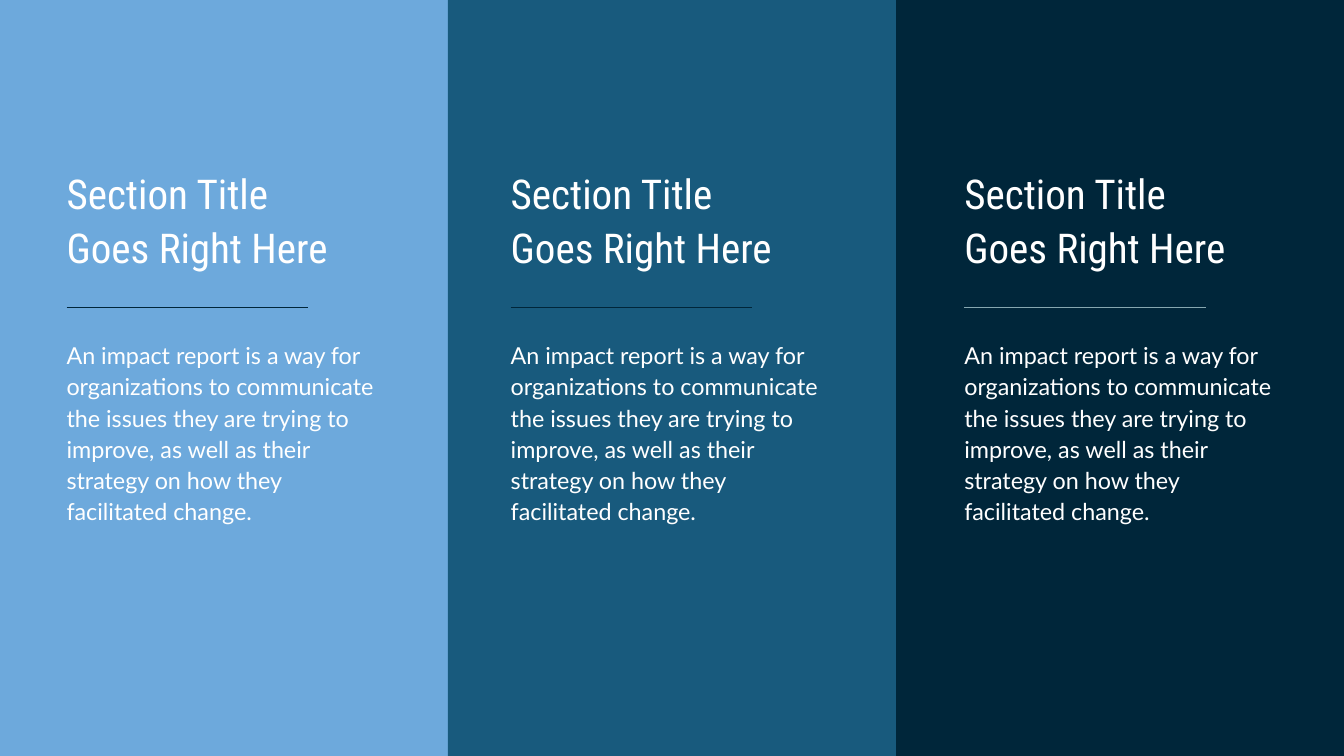
"""Build a slide of three coloured columns, each with a heading, a rule and a paragraph."""
from pptx import Presentation
from pptx.dml.color import RGBColor
from pptx.enum.shapes import MSO_CONNECTOR, MSO_SHAPE
from pptx.enum.text import MSO_ANCHOR, MSO_AUTO_SIZE, PP_ALIGN
from pptx.oxml.ns import qn
from pptx.util import Inches, Pt
from lxml import etree

RECT, STRAIGHT = MSO_SHAPE.RECTANGLE, MSO_CONNECTOR.STRAIGHT
TOP, LEFT, NO_FIT = MSO_ANCHOR.TOP, PP_ALIGN.LEFT, MSO_AUTO_SIZE.NONE

HEADING = ["Section Title", "Goes Right Here"]
BODY = [
    "An impact report is a way for organizations to communicate the issues "
    "they are trying to improve, as well as their strategy on how they "
    "facilitated change."
]
COLUMNS = [
    {"heading": HEADING, "body": BODY, "left": 0.99, "panel": "sky", "rule": "navy"},
    {"heading": HEADING, "body": BODY, "left": 7.6, "panel": "teal", "rule": "navy"},
    {"heading": HEADING, "body": BODY, "left": 14.35, "panel": "navy", "rule": "mist"},
]
THEME = {
    "sky": RGBColor.from_string("6DA9DC"),
    "teal": RGBColor.from_string("185A7D"),
    "navy": RGBColor.from_string("00263A"),
    "mist": RGBColor.from_string("86A7B0"),
    "text": RGBColor.from_string("FFFFFF"),
    "heading": {"font": "Roboto Condensed", "size": 44, "leading": 57.2},
    "body": {"font": "Lato", "size": 25, "leading": 33.5},
}
SLIDE_W, SLIDE_H = 20, 11.25
PANEL_W = SLIDE_W / len(COLUMNS)
HEADING_Y, RULE_Y, BODY_Y = 2.45, 4.58, 5.03
HEADING_W, RULE_W, BODY_W = 4.8, 3.59, 4.65
HEADING_H, BODY_H = 1.58, 2.75


def write(sp, lines, *, box, font, size, leading):
    sp.left, sp.top, sp.width, sp.height = map(Inches, box)
    tf = sp.text_frame
    tf.word_wrap, tf.auto_size, tf.vertical_anchor = True, NO_FIT, TOP
    tf.margin_left = tf.margin_top = tf.margin_right = tf.margin_bottom = 0
    for i, line in enumerate(lines):
        p = tf.add_paragraph() if i else tf.paragraphs[0]
        p.alignment, p.line_spacing = LEFT, Pt(leading)
        p.space_before = p.space_after = Pt(0)
        r = p.add_run()
        r.text = line
        r.font.name, r.font.size = font, Pt(size)
        r.font.color.rgb = THEME["text"]


def add_panel(s, index, color):
    sp = s.shapes.add_shape(
        RECT, Inches(index * PANEL_W), 0, Inches(PANEL_W), Inches(SLIDE_H))
    sp.shadow.inherit = False
    sp.fill.solid()
    sp.fill.fore_color.rgb = color
    sp.line.fill.background()


def add_rule(s, left, color):
    line = s.shapes.add_connector(
        STRAIGHT, Inches(left), Inches(RULE_Y), Inches(left + RULE_W), Inches(RULE_Y))
    line.line.color.rgb, line.line.width = color, Pt(1.5)
    etree.SubElement(line._element.spPr, qn("a:effectLst"))


def main():
    prs = Presentation()
    prs.slide_width, prs.slide_height = Inches(SLIDE_W), Inches(SLIDE_H)
    s = prs.slides.add_slide(prs.slide_layouts.get_by_name("Title Only"))
    s.background.fill.solid()
    s.background.fill.fore_color.rgb = THEME[COLUMNS[0]["panel"]]
    for i, column in enumerate(COLUMNS):
        left = column["left"]
        if i:
            add_panel(s, i, THEME[column["panel"]])
        heading = s.shapes.add_textbox(0, 0, 0, 0) if i else s.shapes.title
        write(heading, column["heading"],
              box=(left, HEADING_Y, HEADING_W, HEADING_H), **THEME["heading"])
        write(s.shapes.add_textbox(0, 0, 0, 0), column["body"],
              box=(left, BODY_Y, BODY_W, BODY_H), **THEME["body"])
        add_rule(s, left, THEME[column["rule"]])
    prs.save("out.pptx")


if __name__ == "__main__":
    main()
